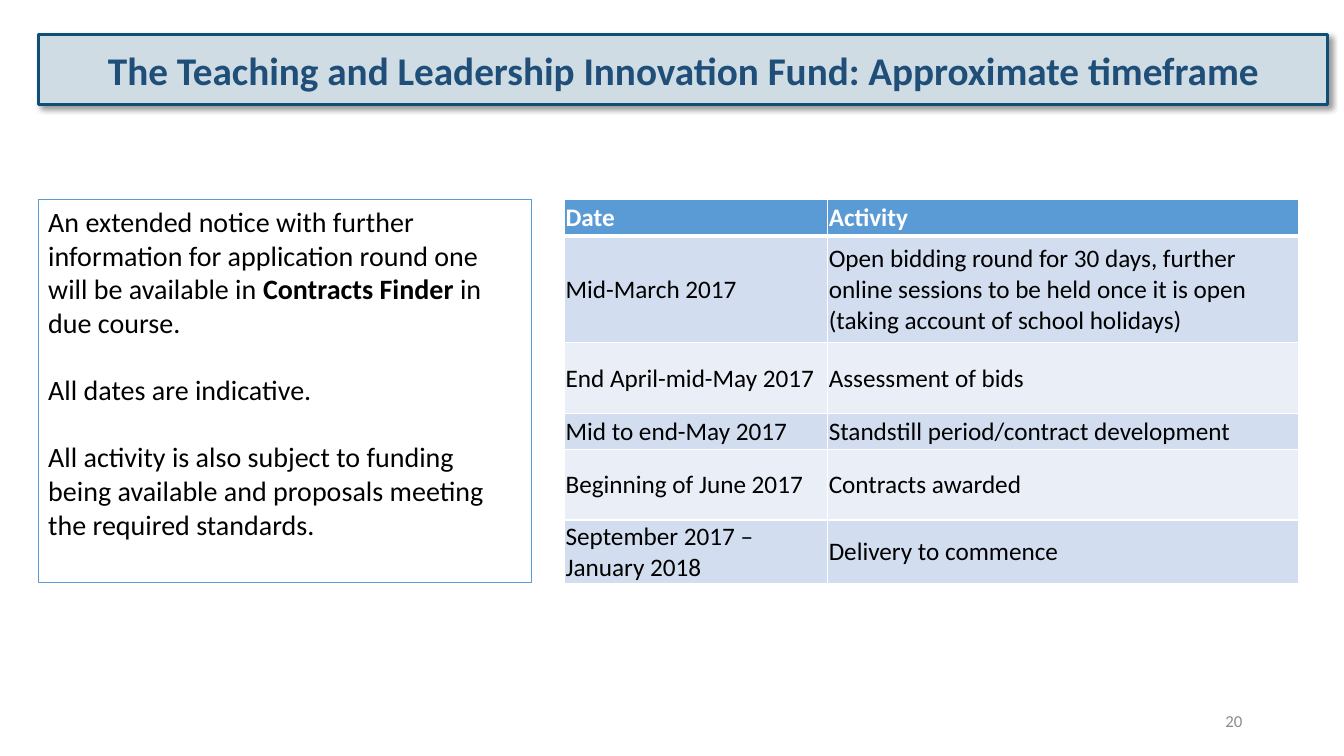
import pptx
import pptx.util
import pptx.dml.color
import pptx.enum.shapes
import pptx.enum.text
import lxml.etree
from pptx.util import Inches

ALIGN = pptx.enum.text.PP_ALIGN
ANCHOR = pptx.enum.text.MSO_ANCHOR
DRAWING = 'xmlns:a="http://schemas.openxmlformats.org/drawingml/2006/main"'


def paint(color_format, value):
    color_format.rgb = pptx.dml.color.RGBColor.from_string(value)


def style(paragraph, size, color, bold=None, align=ALIGN.LEFT):
    paragraph.alignment = align
    paragraph.font.name = "Calibri"
    paragraph.font.size = pptx.util.Pt(size)
    paragraph.font.bold = bold
    paint(paragraph.font.color, color)


deck = pptx.Presentation()
deck.slide_width, deck.slide_height = Inches(13.33), Inches(7.5)
slide = deck.slides.add_slide(deck.slide_layouts[5])

heading = slide.shapes.title
heading.left, heading.top = Inches(0.38), Inches(0.34)
heading.width, heading.height = Inches(12.79), Inches(0.7)
heading.fill.solid()
paint(heading.fill.fore_color, "CFDCE3")
paint(heading.line.color, "104F75")
heading.line.width = pptx.util.Pt(2.25)
heading.text_frame.text = "The Teaching and Leadership Innovation Fund: Approximate timeframe"
heading.text_frame.auto_size = pptx.enum.text.MSO_AUTO_SIZE.NONE
heading.text_frame.vertical_anchor = ANCHOR.MIDDLE
style(heading.text_frame.paragraphs[0], 28, "1F4E79", True, ALIGN.CENTER)
heading.element.spPr.append(lxml.etree.fromstring(
    f'<a:effectLst {DRAWING}>'
    '<a:outerShdw blurRad="50800" dist="38100" dir="2700000" algn="tl" rotWithShape="0">'
    '<a:srgbClr val="000000"><a:alpha val="40000"/></a:srgbClr>'
    '</a:outerShdw></a:effectLst>'))

timeframe = [
    (0.36, "Date", "Activity"),
    (1.06, "Mid-March 2017",
     "Open bidding round for 30 days, further online sessions to be held once it is open "
     "(taking account of school holidays)"),
    (0.7, "End April-mid-May 2017", "Assessment of bids"),
    (0.36, "Mid to end-May 2017", "Standstill period/contract development"),
    (0.7, "Beginning of June 2017", "Contracts awarded"),
    (0.63, "September 2017 – January 2018", "Delivery to commence"),
]
schedule = slide.shapes.add_table(
    len(timeframe), 2, Inches(5.6), Inches(1.98), Inches(7.28), Inches(3.8)).table
for column, width in zip(schedule.columns, (2.61, 4.67)):
    column.width = Inches(width)
for index, (height, *entries) in enumerate(timeframe):
    schedule.rows[index].height = Inches(height)
    is_header = index == 0
    band = "5B9BD5" if is_header else ("EAEFF7", "D2DEEF")[index % 2]
    for cell, entry in zip(schedule.rows[index].cells, entries):
        cell.text = entry
        cell.vertical_anchor = ANCHOR.MIDDLE
        cell.margin_left = cell.margin_right = cell.margin_top = Inches(0.01)
        cell.margin_bottom = 0
        cell.fill.solid()
        paint(cell.fill.fore_color, band)
        style(cell.text_frame.paragraphs[0], 18, "FFFFFF" if is_header else "000000", is_header)
        for position, side in enumerate("LRTB"):
            weight = 38100 if is_header and side == "B" or index == 1 and side == "T" else 12700
            cell._tc.tcPr.insert(position, lxml.etree.fromstring(
                f'<a:ln{side} {DRAWING} w="{weight}"><a:solidFill>'
                f'<a:srgbClr val="FFFFFF"/></a:solidFill></a:ln{side}>'))

notice = slide.shapes.add_shape(
    pptx.enum.shapes.MSO_SHAPE.RECTANGLE, Inches(0.38), Inches(1.98), Inches(4.89), Inches(3.8))
notice.shadow.inherit = False
notice.fill.solid()
paint(notice.fill.fore_color, "FFFFFF")
paint(notice.line.color, "5B9BD5")
notice.line.width = pptx.util.Pt(1)
notice.text_frame.word_wrap = True
notice.text_frame.vertical_anchor = ANCHOR.TOP
statements = [
    [("An extended notice with further information for application round one "
      "will be available in ", None), ("Contracts Finder ", True), ("in due course.", None)],
    [("All dates are indicative.", None)],
    [("All activity is also subject to funding being available and proposals meeting "
      "the required standards.", None)],
]
for index, statement in enumerate(statements):
    paragraph = notice.text_frame.paragraphs[0] if index == 0 else notice.text_frame.add_paragraph()
    for words, bold in statement:
        run = paragraph.add_run()
        run.text = words
        run.font.bold = bold
    style(paragraph, 20, "000000")
    paragraph.space_before = pptx.util.Pt(24 if index else 0)

page_number = slide.shapes.add_textbox(Inches(9.42), Inches(6.95), Inches(3), Inches(0.4))
page_number.text_frame.text = "20"
page_number.text_frame.word_wrap = True
page_number.text_frame.vertical_anchor = ANCHOR.MIDDLE
style(page_number.text_frame.paragraphs[0], 12, "8C8C8C", align=ALIGN.RIGHT)

deck.save("out.pptx")
